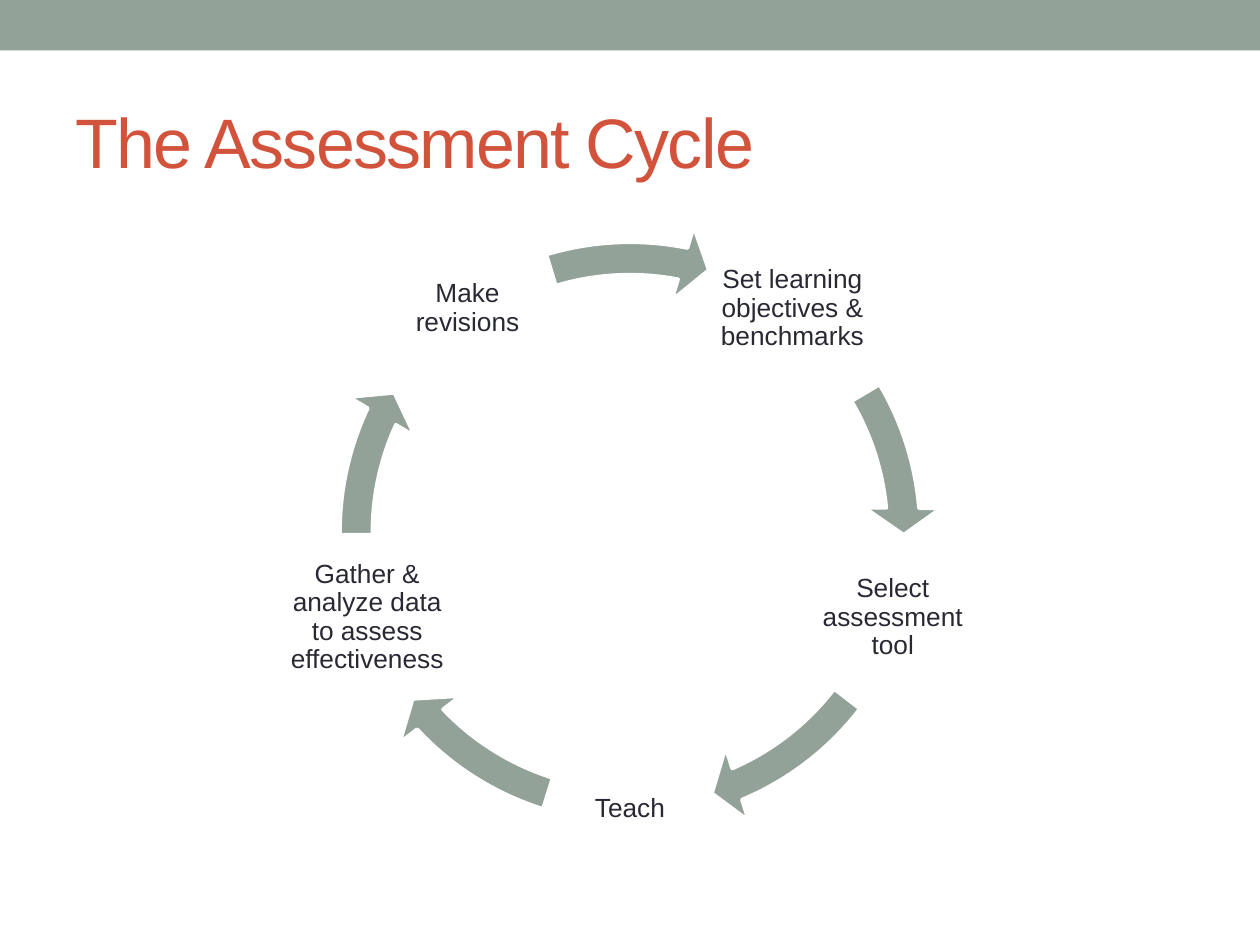
"""Build the assessment cycle slide: five steps on a ring joined by curved arrows."""
import math

from pptx import Presentation, util as u
from pptx.dml.color import RGBColor
from pptx.enum import shapes, text

TITLE = "The Assessment Cycle"
CYCLE = [
    ("Set learning objectives & benchmarks", 329.4, 354.93),
    ("Select assessment tool", 37.52, 66.96),
    ("Teach", 107.46, 136.9),
    ("Gather & analyze data to assess effectiveness", 179.48, 205.01),
    ("Make revisions", 253.27, 281.14),
]
THEME = {
    "font": "Arial", "title_size": 40, "step_size": 15, "outline": 2.08,
    "sage": "93A299", "red": "D2533C", "ink": "292934", "white": "FFFFFF",
}
SLIDE_WIDTH, SLIDE_HEIGHT = 25.4, 19.05
BAR_HEIGHT = 1.02
TITLE_BOX = (1.27, 1.47, 22.86, 2.74)
CENTER_X, CENTER_Y = 12.7, 10.73
RADIUS, STEP_SIDE, RING_SIDE = 5.57, 3.35, 12.57
FIRST_ANGLE = -54
BAND, HEAD_ANGLE, HEAD_WIDTH = 0.052, 5.59, 0.061
DEGREE = 0.6


def color(name):
    return RGBColor.from_string(THEME[name])


def apply(target, values):
    for name, value in values.items():
        setattr(target, name, value)


def square(center_x, center_y, side):
    return [u.Cm(length) for length in (center_x - side / 2, center_y - side / 2, side, side)]


def write(shape, content, size, ink, frame_format, paragraph_format):
    frame = shape.text_frame
    apply(frame, {"word_wrap": True, "vertical_anchor": text.MSO_ANCHOR.MIDDLE, **frame_format})
    paragraph = frame.paragraphs[0]
    apply(paragraph, paragraph_format)
    run = paragraph.add_run()
    run.text = content
    apply(run.font, {"name": THEME["font"], "size": u.Pt(THEME[size])})
    run.font.color.rgb = color(ink)
    return run


def add_filled(slide, kind, box):
    shape = slide.shapes.add_shape(kind, *box)
    shape.shadow.inherit = False
    shape.fill.solid()
    shape.fill.fore_color.rgb = color("sage")
    shape.line.fill.background()
    return shape


def add_title(slide):
    title = slide.shapes.title
    apply(title, dict(zip(("left", "top", "width", "height"), map(u.Cm, TITLE_BOX))))
    run = write(title, TITLE, "title_size", "red", {}, {"alignment": text.PP_ALIGN.LEFT})
    run.font._element.set("spc", "-100")


def add_step(slide, index, content):
    angle = math.radians(FIRST_ANGLE + index * 360 / len(CYCLE))
    center = CENTER_X + RADIUS * math.cos(angle), CENTER_Y + RADIUS * math.sin(angle)
    box = slide.shapes.add_textbox(*square(*center, STEP_SIDE))
    margins = {f"margin_{side}": u.Cm(0.05) for side in ("left", "top", "right", "bottom")}
    write(box, content, "step_size", "ink", margins,
          {"alignment": text.PP_ALIGN.CENTER, "line_spacing": 0.9})


def add_arrow(slide, start, end):
    arrow = add_filled(slide, shapes.MSO_SHAPE.CIRCULAR_ARROW, square(CENTER_X, CENTER_Y, RING_SIDE))
    adjustments = (BAND, HEAD_ANGLE * DEGREE, end * DEGREE, start * DEGREE, HEAD_WIDTH)
    for position, value in enumerate(adjustments):
        arrow.adjustments[position] = value
    arrow.line.color.rgb = color("white")
    arrow.line.width = u.Pt(THEME["outline"])


def main():
    presentation = Presentation()
    apply(presentation, {"slide_width": u.Cm(SLIDE_WIDTH), "slide_height": u.Cm(SLIDE_HEIGHT)})
    slide = presentation.slides.add_slide(presentation.slide_layouts.get_by_name("Title Only"))
    add_filled(slide, shapes.MSO_SHAPE.RECTANGLE, [u.Cm(n) for n in (0, 0, SLIDE_WIDTH, BAR_HEIGHT)])
    add_title(slide)
    for index, (content, start, end) in enumerate(CYCLE):
        add_step(slide, index, content)
        add_arrow(slide, start, end)
    presentation.save("out.pptx")


if __name__ == "__main__":
    main()
